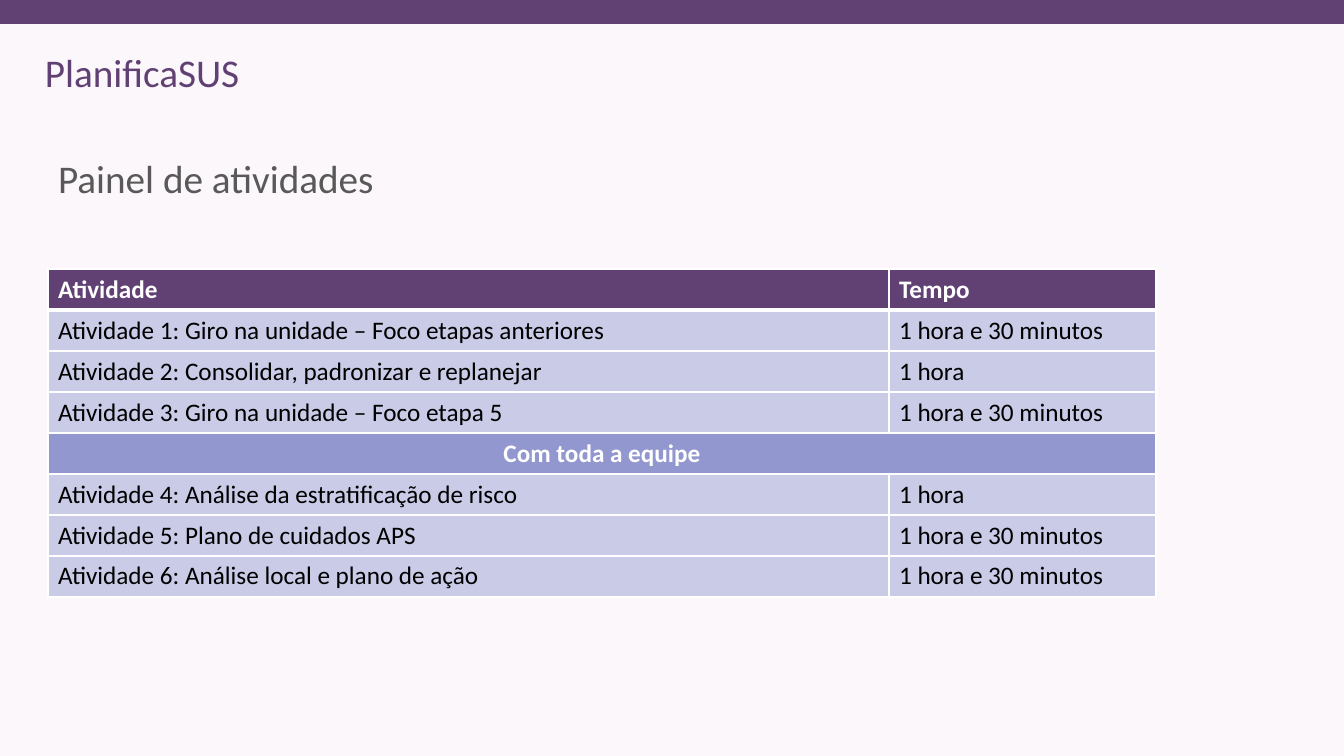
import pptx
import pptx.util
import pptx.dml.color
import pptx.enum.shapes
import pptx.enum.text
import pptx.oxml
import pptx.oxml.ns

PROGRAM = "PlanificaSUS"
TITLE = "Painel de atividades"
HEADER = ("Atividade", "Tempo")
TEAM_BAND = ("Com toda a equipe",)
ROWS = [
    HEADER,
    ("Atividade 1: Giro na unidade – Foco etapas anteriores", "1 hora e 30 minutos"),
    ("Atividade 2: Consolidar, padronizar e replanejar", "1 hora"),
    ("Atividade 3: Giro na unidade – Foco etapa 5", "1 hora e 30 minutos"),
    TEAM_BAND,
    ("Atividade 4: Análise da estratificação de risco", "1 hora"),
    ("Atividade 5: Plano de cuidados APS", "1 hora e 30 minutos"),
    ("Atividade 6: Análise local e plano de ação", "1 hora e 30 minutos"),
]
COLORS = {
    "background": "FCF7FB", "purple": "614173", "gray": "595959",
    "band": "9297CF", "row": "C9CBE7", "white": "FFFFFF", "black": "000000",
}
PX = 914400 / 100.8
SLIDE_W, SLIDE_H = 1344, 756
BAR_H = 24
LEFT = 48
COL_WIDTHS = (841, 267)
ROW_H = 41
ALIGN = pptx.enum.text.PP_ALIGN
ANCHOR = pptx.enum.text.MSO_ANCHOR


def px(n):
    return pptx.util.Emu(round(n * PX))


def rgb(name):
    return pptx.dml.color.RGBColor.from_string(COLORS[name])


def fill(target, color):
    target.fill.solid()
    target.fill.fore_color.rgb = rgb(color)


def write(tf, text, size, color, bold=False, align=ALIGN.LEFT):
    p = tf.paragraphs[0]
    p.alignment = align
    r = p.add_run()
    r.text = text
    style = {"name": "Calibri", "size": pptx.util.Pt(size), "bold": bold}
    for key, value in style.items():
        setattr(r.font, key, value)
    r.font.color.rgb = rgb(color)
    return p


def set_borders(cell, widths):
    """Draw white borders; widths maps L, R, T, B to points."""
    tc_pr = cell._tc.get_or_add_tcPr()
    for i, (side, width) in enumerate(widths.items()):
        tc_pr.insert(i, pptx.oxml.parse_xml(
            f'<a:ln{side} {pptx.oxml.ns.nsdecls("a")} w="{pptx.util.Pt(width)}">'
            f'<a:solidFill><a:srgbClr val="{COLORS["white"]}"/></a:solidFill>'
            f'</a:ln{side}>'))


def add_bar(slide):
    s = slide.shapes.add_shape(pptx.enum.shapes.MSO_SHAPE.RECTANGLE,
                               0, 0, px(SLIDE_W), px(BAR_H))
    s.shadow.inherit = False
    fill(s, "purple")
    s.line.fill.background()


def add_program_name(slide):
    s = slide.shapes.add_textbox(px(35), px(43), px(217), px(57))
    s.text_frame.word_wrap = False
    write(s.text_frame, PROGRAM, 28, "purple")


def place_title(slide):
    s = slide.shapes.title
    box = {"left": LEFT, "top": 108, "width": sum(COL_WIDTHS), "height": 146}
    for key, value in box.items():
        setattr(s, key, px(value))
    s.text_frame.vertical_anchor = ANCHOR.MIDDLE
    s.text_frame.word_wrap = True
    write(s.text_frame, TITLE, 28, "gray").line_spacing = 0.9


def add_activities(slide):
    table = slide.shapes.add_table(
        len(ROWS), len(COL_WIDTHS), px(LEFT), px(269),
        px(sum(COL_WIDTHS)), px(ROW_H * len(ROWS))).table
    for column, width in zip(table.columns, COL_WIDTHS):
        column.width = px(width)
    looks = {
        HEADER: ("purple", "white", True, ALIGN.LEFT),
        TEAM_BAND: ("band", "white", True, ALIGN.CENTER),
    }
    for i, row in enumerate(ROWS):
        table.rows[i].height = px(ROW_H)
        back, color, bold, align = looks.get(row, ("row", "black", False, ALIGN.LEFT))
        if row == TEAM_BAND:
            table.cell(i, 0).merge(table.cell(i, len(COL_WIDTHS) - 1))
        for j in range(len(COL_WIDTHS)):
            cell = table.cell(i, j)
            fill(cell, back)
            set_borders(cell, {"L": 1, "R": 1, "T": 3 if i == 1 else 1,
                               "B": 3 if i == 0 else 1})
            if j < len(row):
                write(cell.text_frame, row[j], 18, color, bold, align)


def main():
    prs = pptx.Presentation()
    prs.slide_width, prs.slide_height = px(SLIDE_W), px(SLIDE_H)
    slide = prs.slides.add_slide(prs.slide_layouts[5])
    fill(slide.background, "background")
    add_bar(slide)
    add_program_name(slide)
    place_title(slide)
    add_activities(slide)
    prs.save("out.pptx")


if __name__ == "__main__":
    main()
